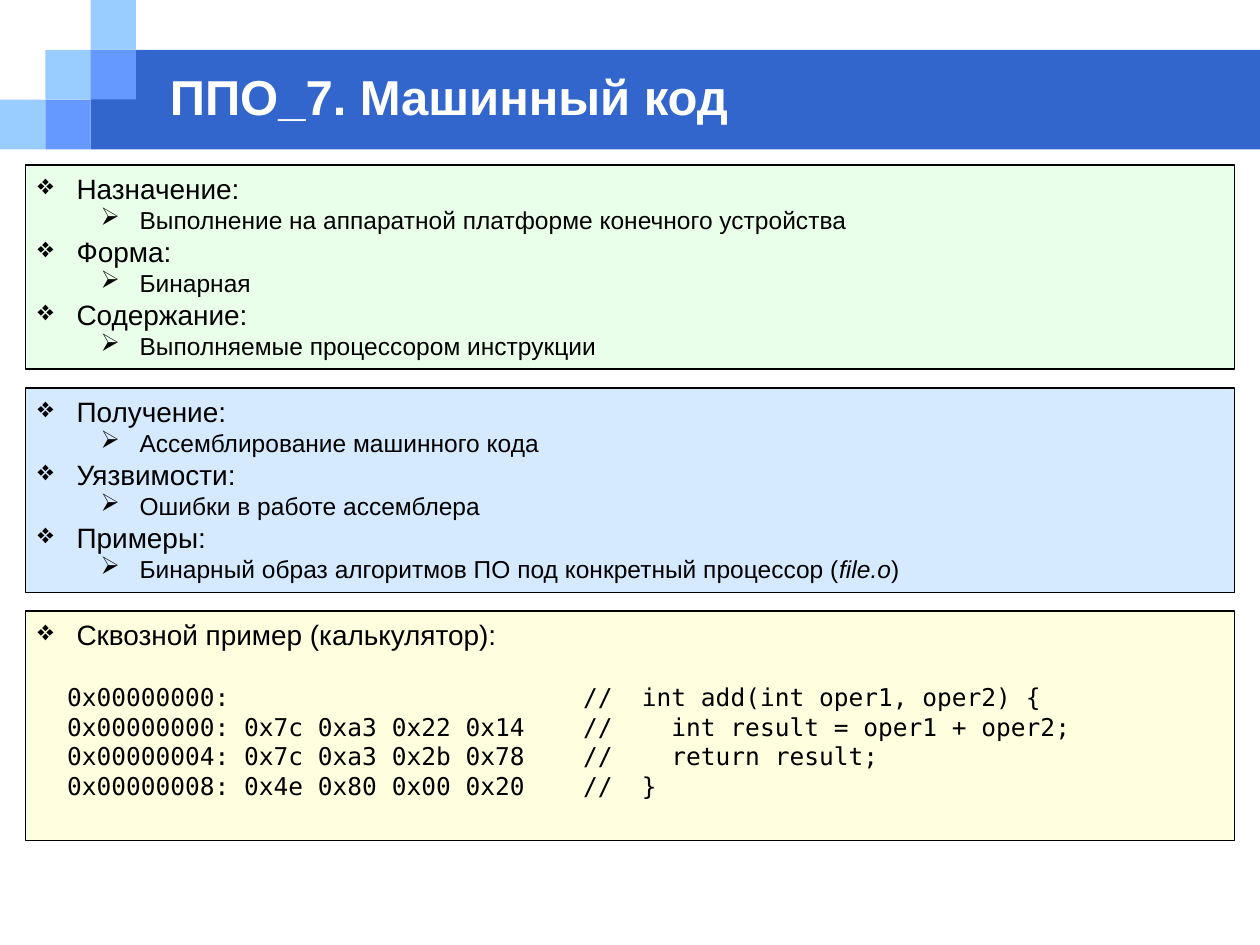
from lxml import etree
from pptx import Presentation
from pptx.dml.color import RGBColor
from pptx.enum.shapes import MSO_SHAPE
from pptx.enum.text import MSO_ANCHOR, PP_ALIGN
from pptx.oxml.ns import qn
from pptx.util import Inches, Pt

RECTANGLE = MSO_SHAPE.RECTANGLE
TOP, MIDDLE = MSO_ANCHOR.TOP, MSO_ANCHOR.MIDDLE
LEFT = PP_ALIGN.LEFT

WIDTH, HEIGHT = 10, 7.5
TILE_W, TILE_H = 0.36, 0.395
PANEL_LEFT, PANEL_TOP, PANEL_PITCH = 0.2, 1.31, 1.77
PANEL_WIDTH = WIDTH - 2 * PANEL_LEFT
BULLETS = [("❖", 0.31, 16), ("➢", 0.81, 14)]
HANGING = 0.31
CODE_SIZE, CODE_CHAR = 14, 0.117
CODE_COLUMNS = (2, 37, 41, 43)

TILES = [
    (0, 2, "99CCFF"), (1, 1, "99CCFF"), (2, 0, "99CCFF"),
    (2, 1, "6699FF"), (1, 2, "6699FF"),
]
PURPOSE = [
    ("Назначение:", ["Выполнение на аппаратной платформе конечного устройства"]),
    ("Форма:", ["Бинарная"]),
    ("Содержание:", ["Выполняемые процессором инструкции"]),
]
ORIGIN = [
    ("Получение:", ["Ассемблирование машинного кода"]),
    ("Уязвимости:", ["Ошибки в работе ассемблера"]),
    ("Примеры:", ["Бинарный образ алгоритмов ПО под конкретный процессор (", "file.o", ")"]),
]
EXAMPLE = "Сквозной пример (калькулятор):"
CODE = [
    ("0x00000000:", "int add(int oper1, oper2) {", 0),
    ("0x00000000: 0x7c 0xa3 0x22 0x14", "int result = oper1 + oper2;", 1),
    ("0x00000004: 0x7c 0xa3 0x2b 0x78", "return result;", 1),
    ("0x00000008: 0x4e 0x80 0x00 0x20", "}", 0),
]


def color(hex_value):
    """Turn a hex string into a colour."""
    return RGBColor.from_string(hex_value)


def add_block(slide, left, top, width, height, fill):
    """Add a plain filled rectangle without outline or shadow."""
    block = slide.shapes.add_shape(
        RECTANGLE, Inches(left), Inches(top), Inches(width), Inches(height))
    block.shadow.inherit = False
    block.fill.solid()
    block.fill.fore_color.rgb = color(fill)
    block.line.fill.background()
    return block


def add_panel(slide, row, height, tint):
    """Add an outlined panel with a 20 % tint and return its text frame."""
    panel = add_block(slide, PANEL_LEFT, PANEL_TOP + row * PANEL_PITCH,
                      PANEL_WIDTH, height, tint)
    tint_color = panel.fill._xPr.find(qn("a:solidFill"))[0]
    etree.SubElement(tint_color, qn("a:alpha"), val="20000")
    panel.line.color.rgb = color("000000")
    panel.line.width = Pt(0.75)
    content = panel.text_frame
    content.word_wrap = True
    content.vertical_anchor = TOP
    return content


def next_paragraph(content):
    """Return the first paragraph while it is unused, else a new one."""
    first = content.paragraphs[0]
    return content.add_paragraph() if first.runs else first


def style(paragraph, size, family="Arial", hex_value="000000"):
    """Set the alignment and font shared by all runs of a paragraph."""
    paragraph.alignment = LEFT
    paragraph.font.size = Pt(size)
    paragraph.font.name = family
    paragraph.font.color.rgb = color(hex_value)


def add_bullet(content, level, pieces):
    """Add a bulleted line in which every second piece is italic."""
    mark, indent, size = BULLETS[level]
    paragraph = next_paragraph(content)
    paragraph.level = level
    for index, piece in enumerate(pieces):
        run = paragraph.add_run()
        run.text = piece
        if index % 2:
            run.font.italic = True
    style(paragraph, size)
    properties = paragraph._p.get_or_add_pPr()
    properties.set("marL", str(Inches(indent)))
    properties.set("indent", str(-Inches(HANGING)))
    bullet = etree.Element(qn("a:buChar"), char=mark)
    properties.insert(0, bullet)


def add_code_line(content, machine_code, source, depth):
    """Add a code line whose columns stand on tab stops."""
    paragraph = next_paragraph(content)
    indent = "\t" * (1 + depth)
    paragraph.add_run().text = f"\t{machine_code}\t//{indent}{source}"
    style(paragraph, CODE_SIZE, "DejaVu Sans Mono")
    stops = etree.Element(qn("a:tabLst"))
    for column in CODE_COLUMNS:
        etree.SubElement(stops, qn("a:tab"), algn="l",
                         pos=str(Inches(column * CODE_CHAR)))
    paragraph._p.get_or_add_pPr().insert(0, stops)
    return paragraph


def add_header(slide, title):
    """Add the title band with its staircase of tiles."""
    band_left = 2 * TILE_W
    add_block(slide, band_left, TILE_H, WIDTH - band_left, 2 * TILE_H, "3366CC")
    for column, row, fill in TILES:
        add_block(slide, column * TILE_W, row * TILE_H, TILE_W, TILE_H, fill)
    heading = slide.shapes.add_textbox(
        Inches(1.25), Inches(0.5), Inches(8.08), Inches(0.53)).text_frame
    heading.word_wrap = True
    heading.vertical_anchor = MIDDLE
    paragraph = heading.paragraphs[0]
    paragraph.text = title
    style(paragraph, 28, hex_value="FFFFFF")
    paragraph.font.bold = True


def add_outline(slide, row, tint, topics):
    """Add a panel of topics, each with one line of detail."""
    content = add_panel(slide, row, 1.62, tint)
    for topic, detail in topics:
        add_bullet(content, 0, [topic])
        add_bullet(content, 1, detail)


def add_example(slide, row, tint):
    """Add the panel with the machine code listing."""
    content = add_panel(slide, row, 1.82, tint)
    add_bullet(content, 0, [EXAMPLE])
    listing = [add_code_line(content, *line) for line in CODE]
    listing[0].space_before = Pt(18)


def main():
    """Build the slide and save it."""
    deck = Presentation()
    deck.slide_width, deck.slide_height = Inches(WIDTH), Inches(HEIGHT)
    slide = deck.slides.add_slide(deck.slide_layouts[6])
    add_header(slide, "ППО_7. Машинный код")
    add_outline(slide, 0, "99FF99", PURPOSE)
    add_outline(slide, 1, "3399FF", ORIGIN)
    add_example(slide, 2, "FFFF66")
    deck.save("out.pptx")


if __name__ == "__main__":
    main()
